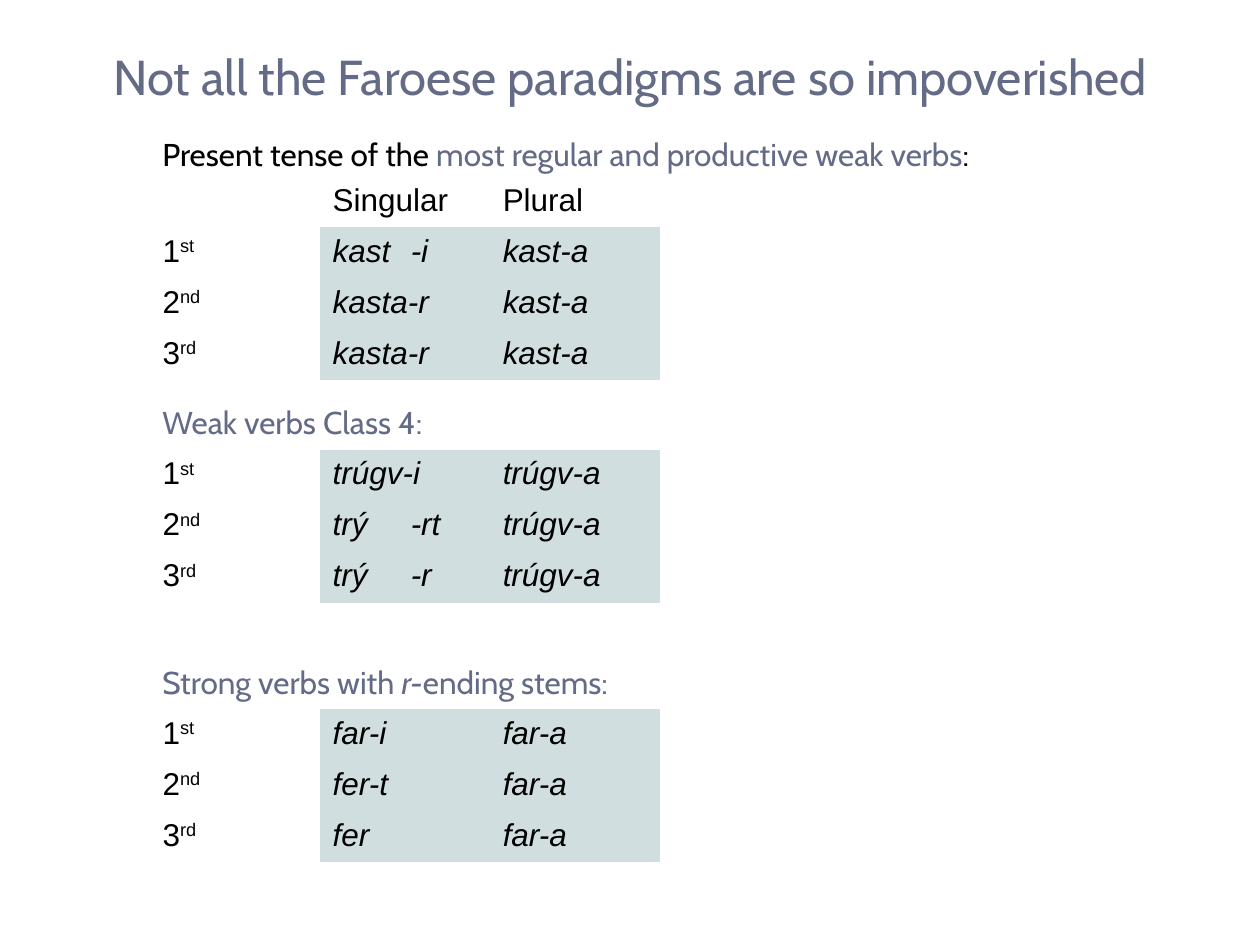
from dataclasses import dataclass

from lxml.etree import SubElement
from pptx import Presentation
from pptx.dml.color import RGBColor
from pptx.enum.text import MSO_ANCHOR, MSO_AUTO_SIZE, PP_ALIGN
from pptx.oxml.ns import qn
from pptx.util import Inches, Pt


@dataclass(frozen=True)
class Theme:
    ink: RGBColor = RGBColor(0x00, 0x00, 0x00)
    accent: RGBColor = RGBColor(0x64, 0x6B, 0x86)
    form_fill: RGBColor = RGBColor(0xD1, 0xDE, 0xDF)
    heading_font: str = "Cabin"
    table_font: str = "Arial"
    title_size: Pt = Pt(28)
    body_size: Pt = Pt(18)


THEME = Theme()
NO_STYLE_NO_GRID = "{2D5ABB26-0587-4C30-8999-92F81FD0307C}"
LEFT = Inches(1.19)
COLUMN_WIDTH = Inches(1.35)
ROW_HEIGHT = Inches(1.62) // 4
ENDING_TAB = Inches(0.62)
PERSONS = [("1", "st"), ("2", "nd"), ("3", "rd")]
NUMBERS = ["Singular", "Plural"]

# Each paradigm: heading top, table top, heading runs (text, accented, italic),
# whether the number row shows, and (singular, plural) by person.
# A tab sets an ending apart from its stem.
PARADIGMS = [
    (1.02, 1.4,
     [("Present tense of the ", False, False),
      ("most regular and productive weak verbs", True, False),
      (":", False, False)],
     True,
     [("kast\t-i", "kast-a"), ("kasta-r", "kast-a"), ("kasta-r", "kast-a")]),
    (3.15, 3.57,
     [("Weak verbs Class 4:", True, False)],
     False,
     [("trúgv-i", "trúgv-a"), ("trý\t-rt", "trúgv-a"), ("trý\t-r", "trúgv-a")]),
    (5.21, 5.63,
     [("Strong verbs with ", True, False), ("r-", True, True),
      ("ending stems:", True, False)],
     False,
     [("far-i", "far-a"), ("fer-t", "far-a"), ("fer", "far-a")]),
]


def add_run(paragraph, text, font_name, size, color, italic=False):
    run = paragraph.add_run()
    run.text = text
    run.font.name = font_name
    run.font.size = size
    run.font.color.rgb = color
    run.font.italic = italic
    return run


def add_title(slide, text):
    title = slide.shapes.title
    title.left, title.top = 0, Inches(0.24)
    title.width, title.height = Inches(10), Inches(0.73)
    title.text_frame.vertical_anchor = MSO_ANCHOR.MIDDLE
    line = title.text_frame.paragraphs[0]
    line.alignment = PP_ALIGN.CENTER
    add_run(line, text, THEME.heading_font, THEME.title_size, THEME.accent)


def add_heading(slide, top, parts):
    heading = slide.shapes.add_textbox(LEFT, Inches(top), Inches(7.6), Inches(0.4))
    heading.text_frame.word_wrap = True
    heading.text_frame.auto_size = MSO_AUTO_SIZE.SHAPE_TO_FIT_TEXT
    for text, accented, italic in parts:
        color = THEME.accent if accented else THEME.ink
        add_run(heading.text_frame.paragraphs[0], text, THEME.heading_font,
                THEME.body_size, color, italic)


def write_cell(cell, text, italic=False):
    line = cell.text_frame.paragraphs[0]
    if "\t" in text:
        tabs = SubElement(line._p.get_or_add_pPr(), qn("a:tabLst"))
        SubElement(tabs, qn("a:tab"), pos=str(int(ENDING_TAB)), algn="l")
    return add_run(line, text, THEME.table_font, THEME.body_size, THEME.ink, italic)


def write_person(cell, numeral, suffix):
    write_cell(cell, numeral)
    ordinal = write_cell(cell, suffix)
    ordinal.font._element.set("baseline", "30000")


def add_paradigm_table(slide, top, with_numbers, forms):
    first = 1 if with_numbers else 0
    row_count = len(forms) + first
    table = slide.shapes.add_table(
        row_count, 3, LEFT, Inches(top), COLUMN_WIDTH * 3, ROW_HEIGHT * row_count
    ).table
    table.first_row = table.horz_banding = False
    table._tbl.tblPr.find(qn("a:tableStyleId")).text = NO_STYLE_NO_GRID
    for cell in table.iter_cells():
        cell.fill.background()

    # Number row
    if with_numbers:
        for column, number in enumerate(NUMBERS, start=1):
            write_cell(table.cell(0, column), number)

    # Person rows
    for row, (person, verb_forms) in enumerate(zip(PERSONS, forms), start=first):
        write_person(table.cell(row, 0), *person)
        for column, form in enumerate(verb_forms, start=1):
            cell = table.cell(row, column)
            cell.fill.solid()
            cell.fill.fore_color.rgb = THEME.form_fill
            write_cell(cell, form, italic=True)


def main():
    deck = Presentation()
    deck.slide_width, deck.slide_height = Inches(10), Inches(7.5)
    slide = deck.slides.add_slide(deck.slide_layouts.get_by_name("Title Only"))

    add_title(slide, "Not all the Faroese paradigms are so impoverished")
    for heading_top, table_top, heading, with_numbers, forms in PARADIGMS:
        add_paradigm_table(slide, table_top, with_numbers, forms)
        add_heading(slide, heading_top, heading)

    deck.save("out.pptx")


if __name__ == "__main__":
    main()
